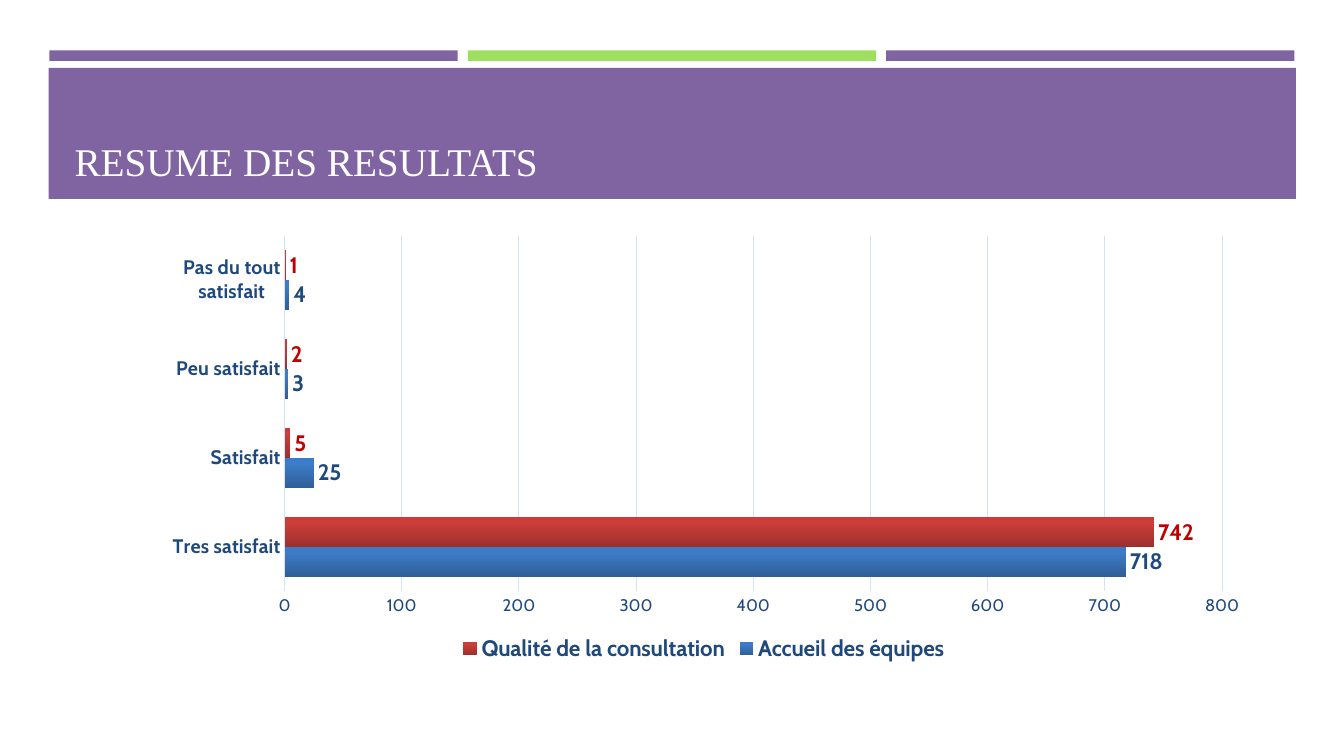
from dataclasses import dataclass

from lxml import etree
from pptx import Presentation
from pptx import util as u
from pptx.chart import data as chart_data
from pptx.dml import color
from pptx.enum import chart as ch, shapes, text
from pptx.oxml import ns, parse_xml


@dataclass(frozen=True)
class Theme:
    """Colours, fonts and type sizes of the slide."""
    purple: str = "8064A2"
    green: str = "9FDF5F"
    white: str = "FFFFFF"
    navy: str = "1F497D"
    red: str = "C00000"
    grid: str = "D4E3F4"
    blue_bar: tuple = ((0, "2F5F99"), (80, "3D7CC7"), (100, "3A7CCB"))
    red_bar: tuple = ((0, "9C2F2D"), (80, "CB3E3A"), (100, "CE3B37"))
    title_font: str = "Times New Roman"
    chart_font: str = "Cabin"
    title_size: int = 28
    label_size: int = 16
    category_size: int = 14
    scale_size: int = 12
    base_size: int = 10


class SlideBuilder:
    """Draws elements on one slide, placed in percent of its size."""

    def __init__(self, deck, theme):
        self.deck = deck
        self.theme = theme
        self.slide = deck.slides.add_slide(deck.slide_layouts[5])

    def place(self, left, top, width, height):
        """Turn percentages into slide lengths."""
        across, down = self.deck.slide_width, self.deck.slide_height
        return [int(share * full / 100) for share, full in
                zip((left, top, width, height), (across, down, across, down))]

    def style(self, font, name, size, ink, bold=False):
        """Set the look of a font."""
        font.name, font.size, font.bold = name, u.Pt(size), bold
        font.color.rgb = color.RGBColor.from_string(ink)

    def bar(self, area, fill):
        """Add a plain filled rectangle."""
        box = self.slide.shapes.add_shape(
            shapes.MSO_SHAPE.RECTANGLE, *self.place(*area))
        box.shadow.inherit = False
        box.fill.solid()
        box.fill.fore_color.rgb = color.RGBColor.from_string(fill)
        box.line.fill.background()

    def title(self, area, wording):
        """Place the title in front of its band."""
        box = self.slide.shapes.title
        box.left, box.top, box.width, box.height = self.place(*area)
        self.slide.shapes._spTree.append(box._element)
        frame = box.text_frame
        frame.text = wording
        frame.word_wrap = True
        frame.auto_size = text.MSO_AUTO_SIZE.NONE
        frame.vertical_anchor = text.MSO_ANCHOR.BOTTOM
        para = frame.paragraphs[0]
        para.alignment = text.PP_ALIGN.LEFT
        self.style(para.runs[0].font, self.theme.title_font,
                   self.theme.title_size, self.theme.white)

    def rule(self, line):
        """Style a thin chart line."""
        line.color.rgb = color.RGBColor.from_string(self.theme.grid)
        line.width = u.Pt(0.75)

    def gradient(self, series, stops):
        """Fill a series with a gradient rising from the bottom."""
        marks = "".join(f'<a:gs pos="{share * 1000}"><a:srgbClr val="{tone}"/></a:gs>'
                        for share, tone in stops)
        fill = parse_xml(f'<a:gradFill {ns.nsdecls("a")} rotWithShape="1"><a:gsLst>{marks}'
                         '</a:gsLst><a:lin ang="16200000" scaled="0"/></a:gradFill>')
        series.format.fill.background()
        properties = series._element.find(ns.qn("c:spPr"))
        properties.replace(properties.find(ns.qn("a:noFill")), fill)

    def plot_layout(self, chart, **shares):
        """Fix the inner plot area within the chart."""
        plot_area = chart._chartSpace.find(".//" + ns.qn("c:plotArea"))
        for old in plot_area.findall(ns.qn("c:layout")):
            plot_area.remove(old)
        layout = etree.Element(ns.qn("c:layout"))
        manual = etree.SubElement(layout, ns.qn("c:manualLayout"))
        settings = dict(layoutTarget="inner", xMode="edge", yMode="edge", **shares)
        for tag, value in settings.items():
            etree.SubElement(manual, ns.qn(f"c:{tag}")).set("val", str(value))
        plot_area.insert(0, layout)

    def bar_chart(self, area, categories, rows):
        """Add a clustered bar chart from name, values, stops and ink rows."""
        theme = self.theme
        figures = chart_data.CategoryChartData()
        figures.categories = categories
        for name, values, _, _ in rows:
            figures.add_series(name, values)
        chart = self.slide.shapes.add_chart(
            ch.XL_CHART_TYPE.BAR_CLUSTERED, *self.place(*area), figures).chart
        chart.font.name, chart.font.size = theme.chart_font, u.Pt(theme.base_size)
        chart.has_title = False
        chart.has_legend = True
        chart.legend.position = ch.XL_LEGEND_POSITION.BOTTOM
        chart.legend.include_in_layout = False
        self.style(chart.legend.font, theme.chart_font, theme.label_size, theme.navy, True)

        plot = chart.plots[0]
        plot.gap_width, plot.overlap, plot.vary_by_categories = 100, 0, False
        for series, (_, _, stops, ink) in zip(plot.series, rows):
            self.gradient(series, stops)
            labels = series.data_labels
            labels.show_value = True
            labels.position = ch.XL_LABEL_POSITION.OUTSIDE_END
            self.style(labels.font, theme.chart_font, theme.label_size, ink, True)

        names, scale = chart.category_axis, chart.value_axis
        for axis in (names, scale):
            axis.major_tick_mark = axis.minor_tick_mark = ch.XL_TICK_MARK.NONE
        self.style(names.tick_labels.font, theme.chart_font,
                   theme.category_size, theme.navy, True)
        self.style(scale.tick_labels.font, theme.chart_font, theme.scale_size, theme.navy)
        self.rule(names.format.line)
        scale.format.line.fill.background()
        scale.minimum_scale, scale.maximum_scale, scale.major_unit = 0, 800, 100
        scale.has_major_gridlines = True
        self.rule(scale.major_gridlines.format.line)
        self.plot_layout(chart, x=0.12, y=0.02, w=0.85, h=0.81)


def main():
    """Build and save the results slide."""
    deck = Presentation()
    deck.slide_width, deck.slide_height = u.Inches(13.33), u.Inches(7.5)
    theme = Theme()
    page = SlideBuilder(deck, theme)
    for column, fill in enumerate((theme.purple, theme.green, theme.purple)):
        page.bar((3.68 + 31.13 * column, 6.67, 30.38, 1.4), fill)
    page.bar((3.63, 8.98, 92.8, 17.33), theme.purple)
    page.title((4.8, 10.27, 90.47, 14.8), "RESUME DES RESULTATS")
    page.bar_chart(
        (11.33, 30, 82.07, 58.13),
        ("Tres satisfait", "Satisfait", "Peu satisfait", "Pas du tout satisfait"),
        (("Accueil des équipes", (718, 25, 3, 4), theme.blue_bar, theme.navy),
         ("Qualité de la consultation", (742, 5, 2, 1), theme.red_bar, theme.red)))
    deck.save("out.pptx")


if __name__ == "__main__":
    main()
